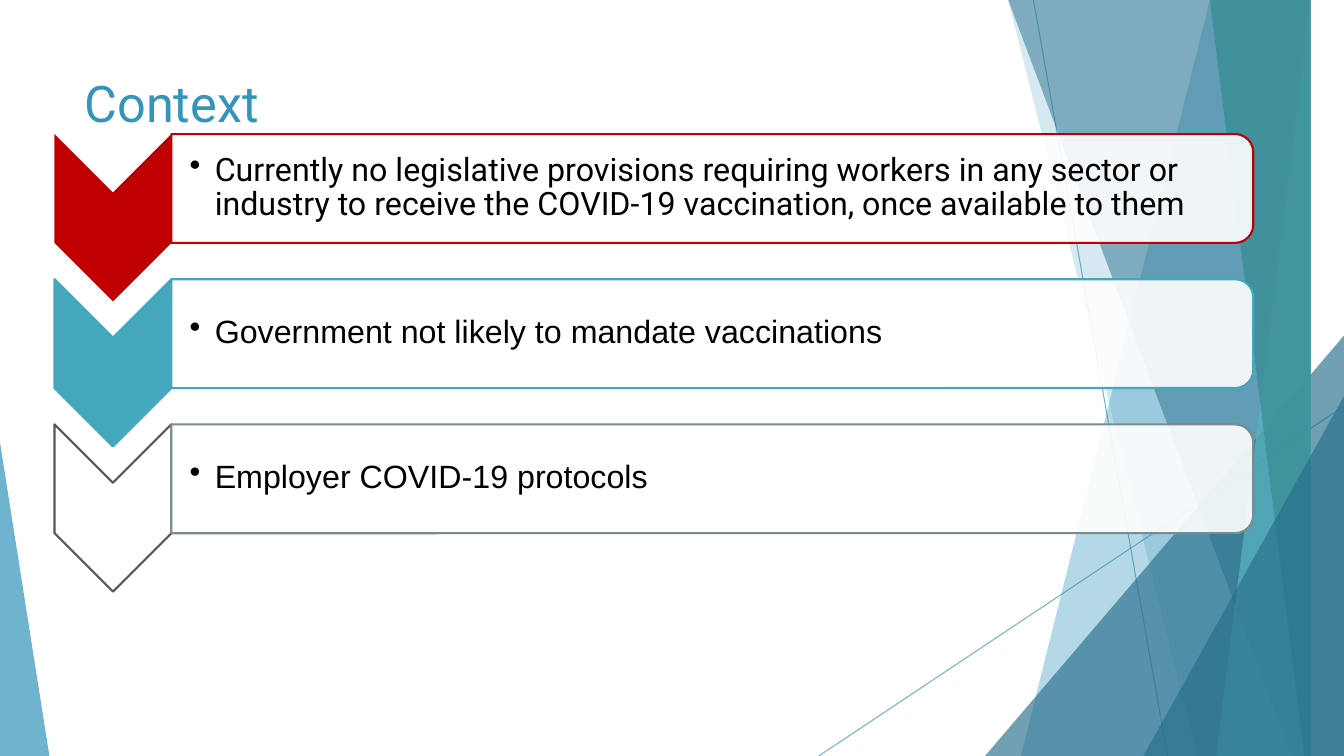
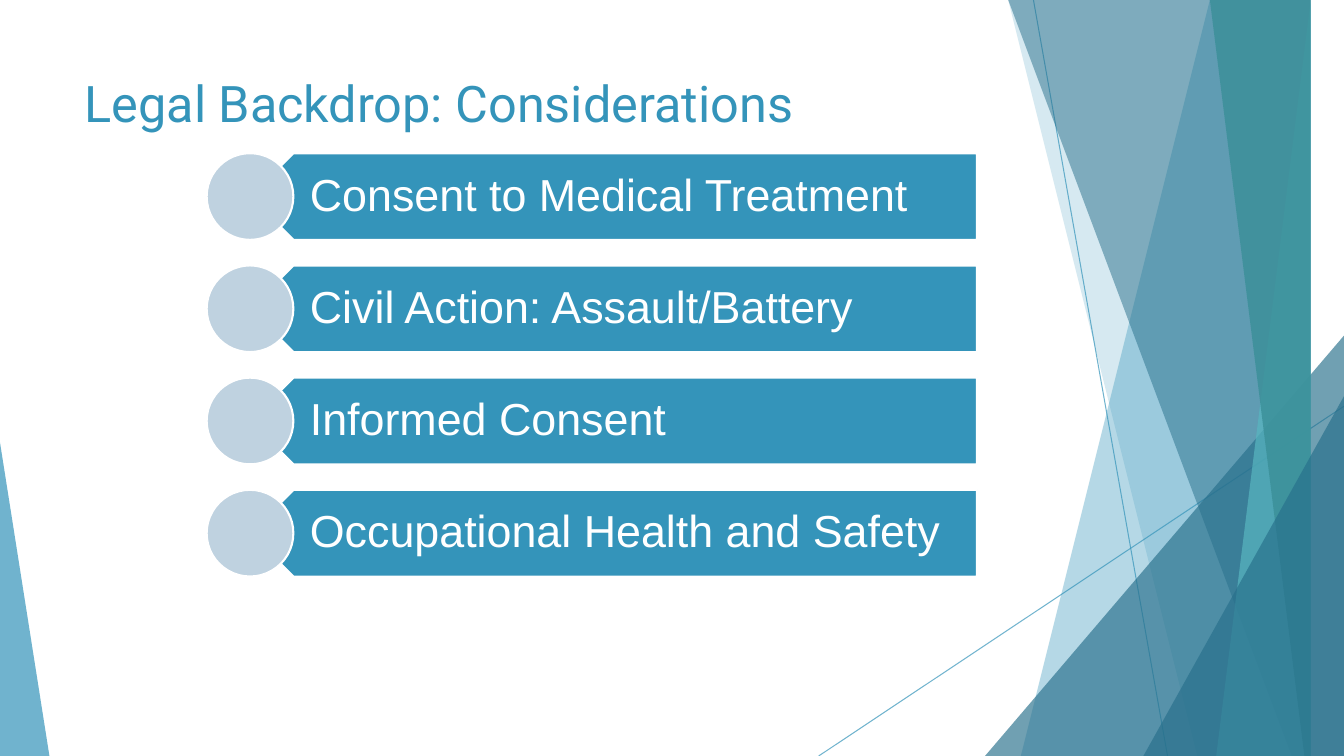
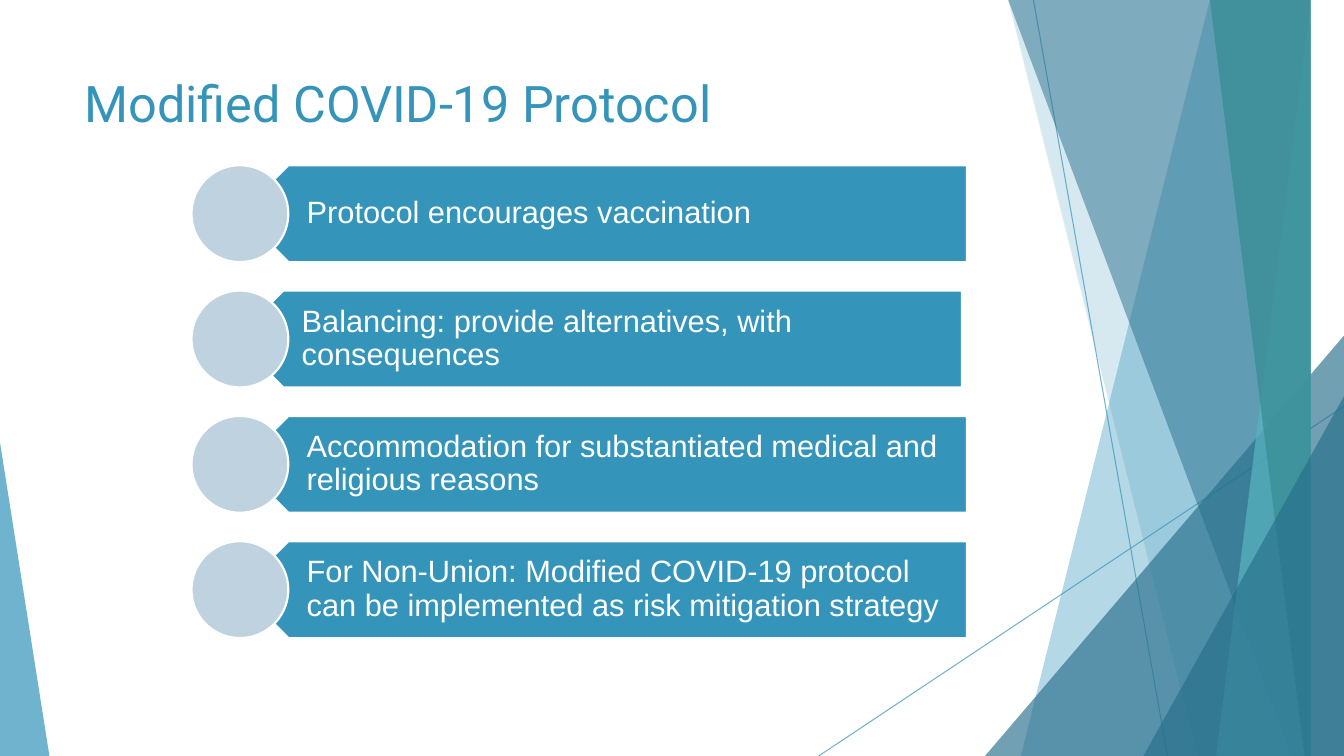
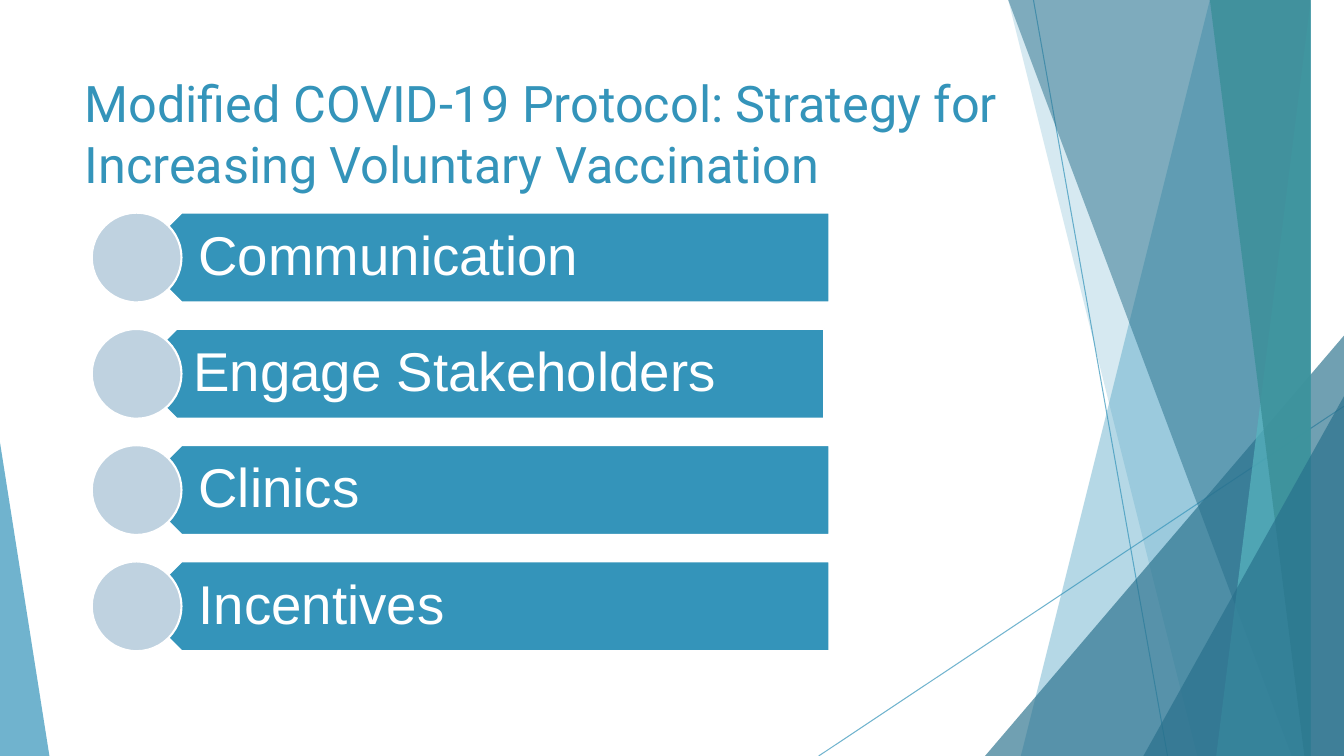
import pptx
import pptx.dml.color
import pptx.enum.shapes
import pptx.enum.text
import pptx.oxml
import pptx.oxml.ns
import pptx.util

Inches = pptx.util.Inches
Pt = pptx.util.Pt
RGBColor = pptx.dml.color.RGBColor
SHAPE = pptx.enum.shapes.MSO_SHAPE
qn = pptx.oxml.ns.qn

BLUE = RGBColor(0x34, 0x94, 0xBA)
DEEP_BLUE = RGBColor(0x27, 0x6F, 0x8B)
AQUA = RGBColor(0x58, 0xB6, 0xC0)
TEAL = RGBColor(0x3A, 0x8F, 0x98)
PALE_BLUE = RGBColor(0xBF, 0xD2, 0xE0)
RED = RGBColor(0xC0, 0x00, 0x00)
CYAN = RGBColor(0x45, 0xA7, 0xBE)
DARK_GRAY = RGBColor(0x59, 0x59, 0x59)
GRAY = RGBColor(0x7A, 0x8C, 0x8E)
BLACK = RGBColor(0, 0, 0)
WHITE = RGBColor(0xFF, 0xFF, 0xFF)

WIDTH, HEIGHT = 13.33, 7.5
TITLE_FONT, BODY_FONT = "Roboto", "Arial"


def set_opacity(shape, percent):
    """Set the opacity of the fill, or of the line of a connector."""
    color = next(shape.element.spPr.iter(qn("a:srgbClr")))
    alpha = pptx.oxml.parse_xml(
        '<a:alpha xmlns:a="http://schemas.openxmlformats.org/drawingml/2006/main"'
        f' val="{percent * 1000}"/>')
    color.append(alpha)


def set_bullet(p, indent):
    pPr = p._p.get_or_add_pPr()
    pPr.set("marL", str(Inches(indent)))
    pPr.set("indent", str(-Inches(indent)))
    bullet = pPr.makeelement(qn("a:buChar"), {"char": "•"})
    pPr.append(bullet)


class Deck:
    def __init__(self):
        self.prs = pptx.Presentation()
        self.prs.slide_width = Inches(WIDTH)
        self.prs.slide_height = Inches(HEIGHT)
        self.shapes = None

    def slide(self, title):
        s = self.prs.slides.add_slide(self.prs.slide_layouts[6])
        self.shapes = s.shapes
        self.backdrop()
        self.text(title, 0.74, 0.67, 9.4, 1.44, 36, BLUE, TITLE_FONT)

    def backdrop(self):
        self.hairline(10.25, 0, 11.58, HEIGHT)
        self.hairline(WIDTH, 4.03, 8.12, HEIGHT)
        self.beam(12.28, 10.04, BLUE, 36)
        self.beam(10.5, 11.83, BLUE, 20)
        self.wedge(9.77, 3.33, 3.56, 1, DEEP_BLUE, 66)
        self.beam(10.21, 12.91, DEEP_BLUE, 50)
        self.beam(13.03, 11.92, AQUA, 70)
        self.beam(11.96, 13.18, TEAL, 80)
        self.wedge(11.34, 3.93, 1.99, 1, DEEP_BLUE, 66)
        self.wedge(0, 4.39, 0.49, 0, BLUE, 70)

    def hairline(self, x1, y1, x2, y2):
        line = self.shapes.add_connector(
            pptx.enum.shapes.MSO_CONNECTOR.STRAIGHT,
            Inches(x1), Inches(y1), Inches(x2), Inches(y2))
        line.line.color.rgb = BLUE
        line.line.width = Pt(0.75)
        set_opacity(line, 70)
        spPr = line.element.spPr
        spPr.append(spPr.makeelement(qn("a:effectLst"), {}))

    def beam(self, top_x, bottom_x, color, opacity):
        """Full-height band from a slanted left edge to the slide's right edge."""
        outline = self.shapes.build_freeform(top_x, 0, scale=Inches(1))
        outline.add_line_segments(
            [(WIDTH, 0), (WIDTH, HEIGHT), (bottom_x, HEIGHT)], close=True)
        self.paint(outline.convert_to_shape(), color, opacity=opacity)

    def wedge(self, x, y, w, apex, color, opacity):
        """Triangle standing on the slide's bottom edge."""
        triangle = self.shape(SHAPE.ISOSCELES_TRIANGLE, x, y, w, HEIGHT - y,
                              color, opacity=opacity)
        triangle.adjustments[0] = apex

    def paint(self, shape, fill=None, line=None, opacity=100):
        shape.shadow.inherit = False
        if fill is None:
            shape.fill.background()
        else:
            shape.fill.solid()
            shape.fill.fore_color.rgb = fill
            if opacity < 100:
                set_opacity(shape, opacity)
        if line is None:
            shape.line.fill.background()
        else:
            shape.line.color.rgb = line
            shape.line.width = Pt(1.5)

    def shape(self, kind, x, y, w, h, fill=None, line=None, opacity=100):
        shape = self.shapes.add_shape(kind, Inches(x), Inches(y), Inches(w), Inches(h))
        self.paint(shape, fill, line, opacity)
        return shape

    def quarter_turned(self, kind, x, y, w, h, fill, line, opacity=100):
        """Shape rotated by 90 degrees that covers the given box once rotated."""
        shape = self.shape(kind, x + (w - h) / 2, y + (h - w) / 2, h, w,
                           fill, line, opacity)
        shape.rotation = 90

    def text(self, text, x, y, w, h, size, color, font=BODY_FONT,
             insets=(0.1, 0.05, 0.1, 0.05), middle=False, spacing=None):
        box = self.shapes.add_textbox(Inches(x), Inches(y), Inches(w), Inches(h))
        tf = box.text_frame
        tf.word_wrap = True
        tf.margin_left, tf.margin_top, tf.margin_right, tf.margin_bottom = map(Inches, insets)
        if middle:
            tf.vertical_anchor = pptx.enum.text.MSO_ANCHOR.MIDDLE
        p = tf.paragraphs[0]
        p.text = text
        p.line_spacing = spacing
        r = p.runs[0]
        r.font.size = Pt(size)
        r.font.name = font
        r.font.color.rgb = color
        return p

    def chevron_row(self, y, text, fill, line, panel_line, font):
        self.quarter_turned(SHAPE.CHEVRON, 0.54, y, 1.16, 1.66, fill, line)
        self.quarter_turned(SHAPE.ROUND_2_SAME_RECTANGLE, 1.7, y, 10.73, 1.08,
                            WHITE, panel_line, 90)
        p = self.text(text, 1.7, y + 0.05, 10.68, 0.97, 23, BLACK, font,
                      (0.18, 0.02, 0.02, 0.02), True, 0.9)
        set_bullet(p, 0.25)

    def circle_list(self, x, top, last_top, diameter, bar_width, size, items, nudged=None):
        """Rows of a circle over a pointed bar; the nudged row's bar sits a bit left."""
        pitch = (last_top - top) / (len(items) - 1)
        inset_y = size * 0.004
        insets = (diameter * 0.44, inset_y, inset_y * 2, inset_y)
        for i, item in enumerate(items):
            y = top + i * pitch
            bar_x = x + diameter / 2 - (0.05 if i == nudged else 0)
            bar = self.shape(SHAPE.PENTAGON, bar_x, y, bar_width, diameter, BLUE, WHITE)
            bar.rotation = 180
            self.text(item, bar_x + diameter / 4, y, bar_width - diameter / 4, diameter,
                      size, WHITE, insets=insets, middle=True, spacing=0.9)
            self.shape(SHAPE.OVAL, x, y, diameter, diameter, PALE_BLUE, WHITE)


def main():
    deck = Deck()

    deck.slide("Context")
    rows = [
        ("Currently no legislative provisions requiring workers in any sector or "
         "industry to receive the COVID-19 vaccination, once available to them",
         RED, None, RED, TITLE_FONT),
        ("Government not likely to mandate vaccinations", CYAN, CYAN, CYAN, BODY_FONT),
        ("Employer COVID-19 protocols", None, DARK_GRAY, GRAY, BODY_FONT),
    ]
    for i, row in enumerate(rows):
        deck.chevron_row(1.33 + i * 1.44, *row)

    deck.slide("Legal Backdrop: Considerations")
    deck.circle_list(2.05, 1.52, 4.86, 0.86, 7.21, 32, [
        "Consent to Medical Treatment",
        "Civil Action: Assault/Battery",
        "Informed Consent",
        "Occupational Health and Safety",
    ])

    deck.slide("Modified COVID-19 Protocol")
    deck.circle_list(1.9, 1.64, 5.37, 0.96, 7.21, 22, [
        "Protocol encourages vaccination",
        "Balancing: provide alternatives, with consequences",
        "Accommodation for substantiated medical and religious reasons",
        "For Non-Union: Modified COVID-19 protocol can be implemented "
        "as risk mitigation strategy",
    ], nudged=1)

    deck.slide("Modified COVID-19 Protocol: Strategy for Increasing Voluntary Vaccination")
    deck.circle_list(0.91, 2.11, 5.57, 0.89, 6.87, 39, [
        "Communication",
        "Engage Stakeholders",
        "Clinics",
        "Incentives",
    ], nudged=1)

    deck.prs.save("out.pptx")


if __name__ == "__main__":
    main()
